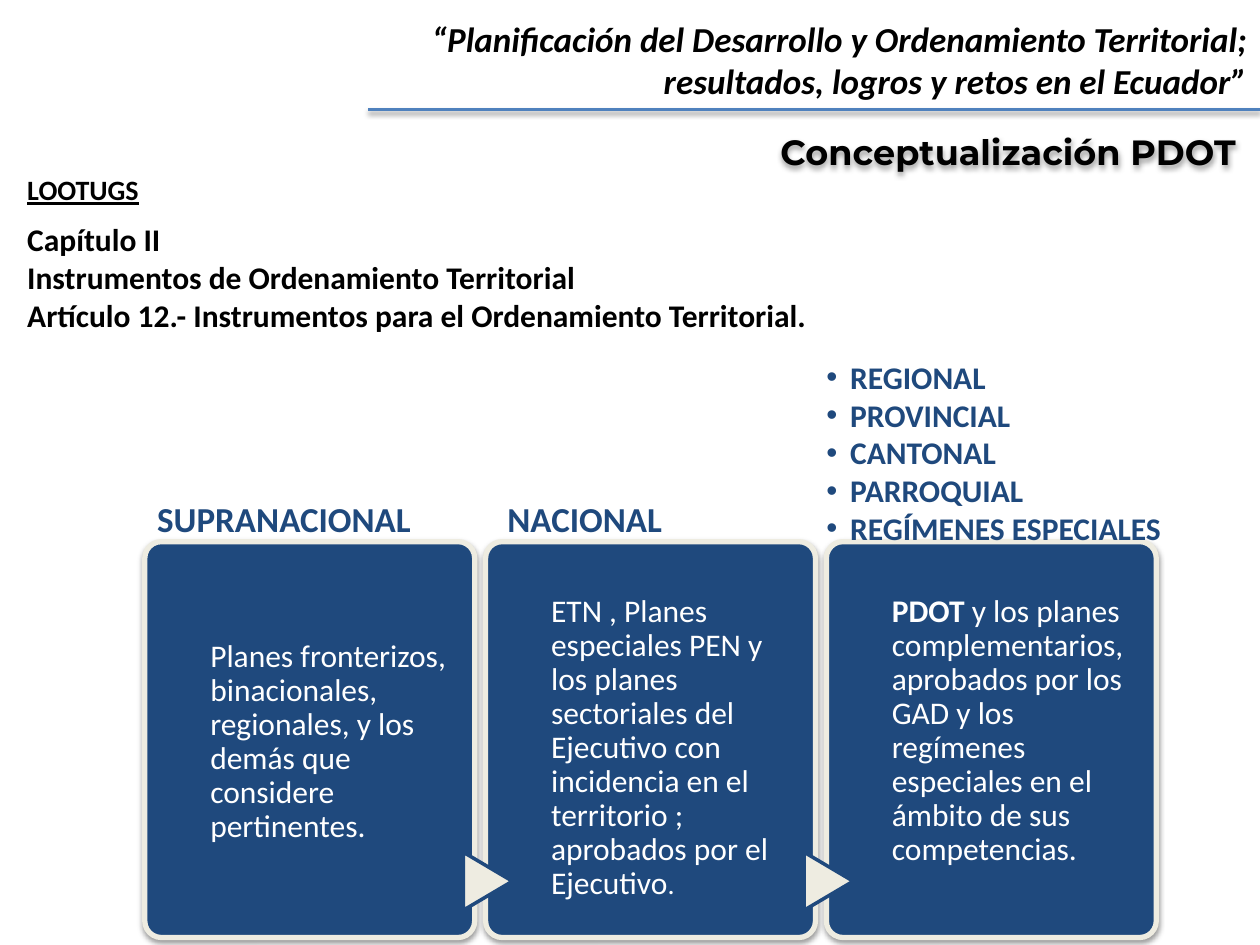
from lxml import etree
from pptx import Presentation
from pptx.dml.color import RGBColor
from pptx.enum import shapes, text
from pptx.oxml import ns
from pptx.util import Cm, Pt

NAVY, CREAM, BLUE, BLACK, WHITE = "1F497D", "EEECE1", "4F81BD", "000000", "FFFFFF"
CARD_WIDTH, CARD_HEIGHT, CARD_PITCH = 6.65, 7.98, 6.87

CARDS = [
    # text inset from the top, runs as (wording, format)
    (1.99, [("Planes fronterizos, binacionales, regionales, y los demás que "
             "considere pertinentes.", {})]),
    (1.08, [("ETN , Planes especiales PEN y los planes sectoriales del Ejecutivo "
             "con incidencia en el territorio ; aprobados por el Ejecutivo", {}),
            (".", {"size": Pt(16)})]),
    (1.08, [("PDOT", {"bold": True}),
            (" y los planes complementarios, aprobados por los GAD y los regímenes "
             "especiales en el ámbito de sus competencias.", {})]),
]


def colour(value):
    return RGBColor.from_string(value)


def add_run(paragraph, wording, ink, **values):
    run = paragraph.add_run()
    run.text = wording
    run.font.color.rgb = colour(ink)
    for name, value in ({"name": "Calibri", "size": Pt(18)} | values).items():
        setattr(run.font, name, value)


def add_child(parent, tag, **attributes):
    return etree.SubElement(parent, ns.qn(tag), attributes)


def add_shadow(properties):
    """Append a soft downward shadow; fill and line must be set before."""
    effects = add_child(properties, "a:effectLst")
    outer = add_child(effects, "a:outerShdw", blurRad=str(Pt(3.1)), dist=str(Pt(1.6)),
                      dir="5400000", rotWithShape="0")
    add_child(add_child(outer, "a:srgbClr", val=BLACK), "a:alpha", val="38000")


def add_lines(slide, box, lines, ink=BLACK, align=None, wrap=True, bullet=None, **values):
    """Text box with one paragraph for each line; box is left, top, width, height in cm."""
    frame = slide.shapes.add_textbox(*map(Cm, box)).text_frame
    frame.word_wrap = wrap
    for index, line in enumerate(lines):
        paragraph = frame.add_paragraph() if index else frame.paragraphs[0]
        paragraph.alignment = align
        if bullet:
            properties = paragraph._p.get_or_add_pPr()
            properties.set("marL", str(Cm(0.48)))
            properties.set("indent", str(-Cm(0.48)))
            add_child(properties, "a:buFont", typeface="Arial")
            add_child(properties, "a:buChar", char=bullet)
        add_run(paragraph, line, ink, bold=True, **values)


def add_header(slide, left, top, width):
    heading = slide.shapes.add_shape(shapes.MSO_SHAPE.ROUNDED_RECTANGLE,
                                     Cm(left + 10.06), Cm(top + 2.06), Cm(12.19), Cm(1.55))
    heading.fill.background()
    heading.line.fill.background()
    add_shadow(heading._element.spPr)
    frame = heading.text_frame
    frame.vertical_anchor = text.MSO_ANCHOR.MIDDLE
    frame.paragraphs[0].alignment = text.PP_ALIGN.CENTER
    add_run(frame.paragraphs[0], "Conceptualización PDOT ", BLACK,
            name="Montserrat", size=Pt(20), bold=True)

    rule = slide.shapes.add_connector(shapes.MSO_CONNECTOR.STRAIGHT, Cm(left + 3.15),
                                      Cm(top + 1.98), Cm(left + width), Cm(top + 1.98))
    rule.line.color.rgb = colour(BLUE)
    rule.line.width = Pt(2)
    add_shadow(rule._element.spPr)

    add_lines(slide, (left, top, width, 1.96),
              ["“Planificación del Desarrollo y Ordenamiento Territorial;",
               "resultados, logros y retos en el Ecuador”"],
              align=text.PP_ALIGN.RIGHT, size=Pt(20), italic=True)


def add_legal_reference(slide, left, top):
    add_lines(slide, (left, top, 3.78, 0.94), ["LOOTUGS"], size=Pt(16), underline=True)
    add_lines(slide, (left, top + 0.97, 23.01, 2.57),
              ["Capítulo II", "Instrumentos de Ordenamiento Territorial",
               "Artículo 12.- Instrumentos para el Ordenamiento Territorial."])


def add_panel(slide, kind, box, fill, outline, weight):
    panel = slide.shapes.add_shape(kind, *map(Cm, box))
    panel.fill.solid()
    panel.fill.fore_color.rgb = colour(fill)
    panel.line.color.rgb = colour(outline)
    panel.line.width = Pt(weight)
    return panel


def add_card(slide, left, top, inset, runs, follows):
    """Card with its text; a card that follows another gets an arrow on its left edge."""
    card = add_panel(slide, shapes.MSO_SHAPE.ROUNDED_RECTANGLE,
                     (left, top, CARD_WIDTH, CARD_HEIGHT), NAVY, CREAM, 3)
    card.adjustments[0] = 0.05
    add_shadow(card._element.spPr)
    if follows:
        arrow = add_panel(slide, shapes.MSO_SHAPE.FLOWCHART_EXTRACT,
                          (left - 0.54, top + 6.35, 1.17, 0.99), CREAM, NAVY, 2)
        arrow.rotation = 90
        arrow.shadow.inherit = False

    frame = slide.shapes.add_textbox(Cm(left + 1.32), Cm(top), Cm(4.95),
                                     Cm(CARD_HEIGHT)).text_frame
    margins = {"margin_left": 0, "margin_right": 0, "margin_bottom": 0,
               "margin_top": Cm(inset), "word_wrap": True}
    for name, value in margins.items():
        setattr(frame, name, value)
    frame.paragraphs[0].line_spacing = 0.9
    for wording, values in runs:
        add_run(frame.paragraphs[0], wording, WHITE, **values)


def add_levels(slide, left, top):
    for index, (inset, runs) in enumerate(CARDS):
        add_card(slide, left + index * CARD_PITCH, top, inset, runs, follows=index > 0)
    for offset, width, level in [(0, 5.66, "SUPRANACIONAL"), (7.06, 3.66, "NACIONAL")]:
        add_lines(slide, (left + offset, top - 1.02, width, 1.12), [level], NAVY,
                  wrap=False, size=Pt(20))
    add_lines(slide, (left + 13.49, top - 3.83, 8.2, 4.11),
              ["REGIONAL", "PROVINCIAL", "CANTONAL", "PARROQUIAL", "REGÍMENES ESPECIALES"],
              NAVY, bullet="•")


def main():
    deck = Presentation()
    deck.slide_width, deck.slide_height = Cm(25.4), Cm(19.05)
    slide = deck.slides.add_slide(deck.slide_layouts[6])
    add_header(slide, 4.27, 0.23, 21.13)
    add_legal_reference(slide, 0.3, 3.35)
    add_levels(slide, 2.92, 10.92)
    deck.save("out.pptx")


if __name__ == "__main__":
    main()
